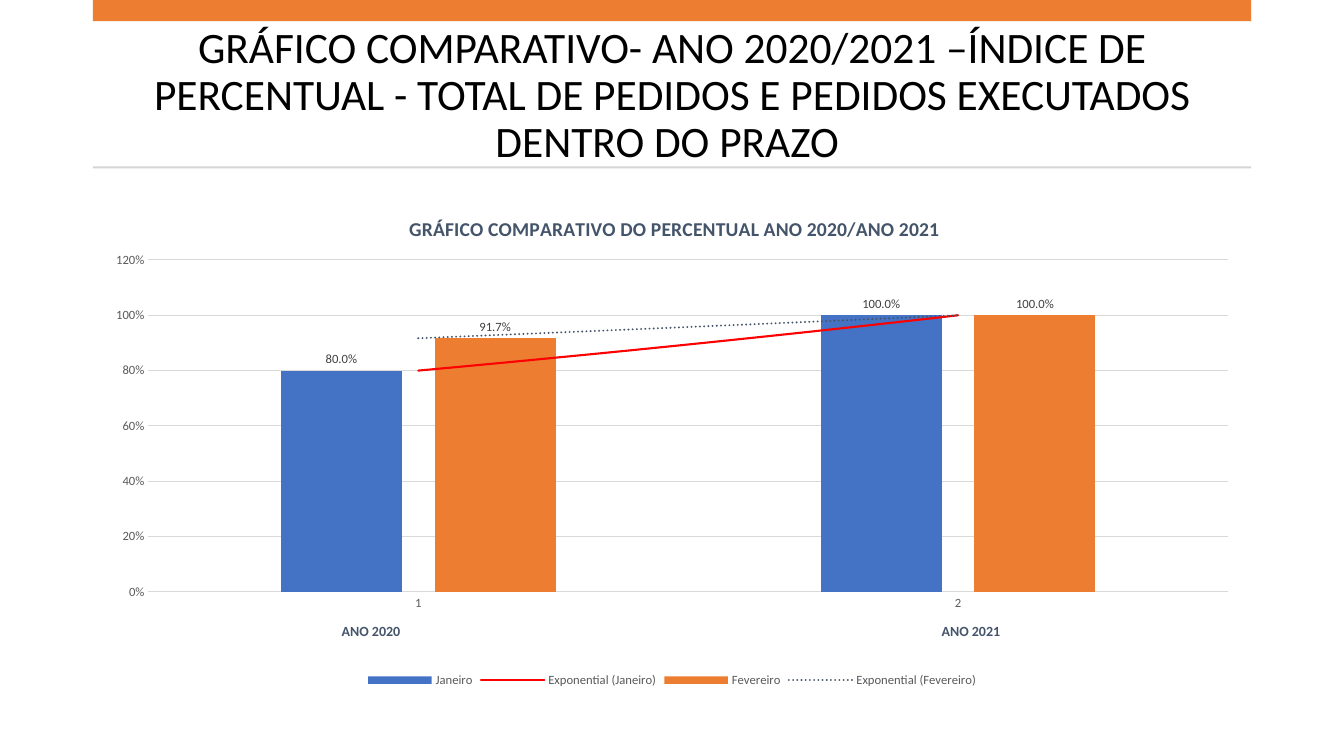
"""Build the slide comparing order percentages for 2020 and 2021."""
from lxml.etree import SubElement
from pptx import Presentation
from pptx.chart.data import CategoryChartData
from pptx.dml.color import RGBColor
from pptx.enum.chart import XL_CHART_TYPE, XL_LABEL_POSITION, XL_LEGEND_POSITION, XL_TICK_MARK
from pptx.enum.shapes import MSO_SHAPE
from pptx.enum.text import MSO_ANCHOR, PP_ALIGN
from pptx.oxml.ns import qn
from pptx.util import Inches, Pt

FONT = "Calibri"
BLACK = RGBColor(0x00, 0x00, 0x00)
BLUE = RGBColor(0x44, 0x72, 0xC4)
ORANGE = RGBColor(0xED, 0x7D, 0x31)
RED = RGBColor(0xFF, 0x00, 0x00)
SLATE = RGBColor(0x44, 0x54, 0x6A)
DARK_GRAY = RGBColor(0x40, 0x40, 0x40)
GRAY = RGBColor(0x59, 0x59, 0x59)
GRID_GRAY = RGBColor(0xD9, 0xD9, 0xD9)
RULE_GRAY = RGBColor(0xD5, 0xD5, 0xD5)

HEADING = ("GRÁFICO COMPARATIVO- ANO 2020/2021 –ÍNDICE DE PERCENTUAL - "
           "TOTAL DE PEDIDOS E PEDIDOS EXECUTADOS DENTRO DO PRAZO ")
CHART_TITLE = "GRÁFICO COMPARATIVO DO PERCENTUAL ANO 2020/ANO 2021"
CATEGORIES = ["1", "2"]
SERIES = [
    ("Janeiro", (0.8, 1), BLUE, RED, "solid"),
    ("Fevereiro", (0.917, 1), ORANGE, SLATE, "sysDot"),
]
BANDS = [(0, 0.21, ORANGE), (1.65, 0.02, RULE_GRAY)]
YEARS = [("ANO 2020", 3.68), ("ANO 2021", 9.63)]
LEFT, WIDTH = 0.92, 11.49
CHART_TOP, CHART_HEIGHT = 1.9, 4.96
YEAR_MIDDLE, YEAR_WIDTH, YEAR_HEIGHT = 6.27, 1.2, 0.3
TITLE_LAYOUT = {"xMode": "edge", "yMode": "edge", "x": 0.27, "y": 0.04}
PLOT_LAYOUT = {"layoutTarget": "inner", "xMode": "edge", "yMode": "edge",
               "x": 0.048, "y": 0.137, "w": 0.932, "h": 0.664}


def style_font(font, size, color, bold=False):
    font.name = FONT
    font.size = Pt(size)
    font.bold = bold
    font.color.rgb = color


def add_text(page, text, left, top, width, height, size, color, bold=False):
    box = page.shapes.add_textbox(Inches(left), Inches(top), Inches(width), Inches(height))
    frame = box.text_frame
    frame.word_wrap = True
    frame.vertical_anchor = MSO_ANCHOR.MIDDLE
    para = frame.paragraphs[0]
    para.alignment = PP_ALIGN.CENTER
    para.line_spacing = 0.9
    span = para.add_run()
    span.text = text
    style_font(span.font, size, color, bold)


def add_band(page, top, height, color):
    band = page.shapes.add_shape(MSO_SHAPE.RECTANGLE, Inches(LEFT), Inches(top),
                                 Inches(WIDTH), Inches(height))
    band.shadow.inherit = False
    band.fill.solid()
    band.fill.fore_color.rgb = color
    band.line.fill.background()


def set_layout(parent, values):
    layout = parent.find(qn("c:layout"))
    if layout is None:
        layout = parent.makeelement(qn("c:layout"))
        text = parent.find(qn("c:tx"))
        if text is None:
            parent.insert(0, layout)
        else:
            text.addnext(layout)
    manual = SubElement(layout, qn("c:manualLayout"))
    for name, value in values.items():
        SubElement(manual, qn(f"c:{name}"), val=str(value))


def add_trend(series, color, dash):
    trend = series._element.makeelement(qn("c:trendline"))
    properties = SubElement(trend, qn("c:spPr"))
    line = SubElement(properties, qn("a:ln"), w=str(Pt(1.5)), cap="rnd")
    fill = SubElement(line, qn("a:solidFill"))
    SubElement(fill, qn("a:srgbClr"), val=str(color))
    SubElement(line, qn("a:prstDash"), val=dash)
    for name, value in (("trendlineType", "exp"), ("dispRSqr", "0"), ("dispEq", "0")):
        SubElement(trend, qn(f"c:{name}"), val=value)
    series._element.find(qn("c:cat")).addprevious(trend)


def style_axes(chart):
    for axis in (chart.category_axis, chart.value_axis):
        axis.major_tick_mark = XL_TICK_MARK.NONE
        axis.minor_tick_mark = XL_TICK_MARK.NONE
        style_font(axis.tick_labels.font, 9, GRAY)
    chart.category_axis.format.line.color.rgb = GRID_GRAY
    chart.category_axis.format.line.width = Pt(0.75)
    values = chart.value_axis
    values.minimum_scale, values.maximum_scale, values.major_unit = 0, 1.2, 0.2
    values.format.line.fill.background()
    values.major_gridlines.format.line.color.rgb = GRID_GRAY
    values.major_gridlines.format.line.width = Pt(0.75)
    values.tick_labels.number_format = "0%"
    values.tick_labels.number_format_is_linked = False


def style_series(series, color, trend_color, dash):
    series.format.fill.solid()
    series.format.fill.fore_color.rgb = color
    labels = series.data_labels
    labels.show_value = True
    labels.position = XL_LABEL_POSITION.OUTSIDE_END
    labels.number_format = "0.0%"
    labels.number_format_is_linked = False
    style_font(labels.font, 9, DARK_GRAY)
    add_trend(series, trend_color, dash)


def add_comparison(page):
    data = CategoryChartData(number_format="0.0%")
    data.categories = CATEGORIES
    for name, values, *_ in SERIES:
        data.add_series(name, values)
    chart = page.shapes.add_chart(XL_CHART_TYPE.COLUMN_CLUSTERED, Inches(LEFT), Inches(CHART_TOP),
                                  Inches(WIDTH), Inches(CHART_HEIGHT), data).chart
    style_font(chart.font, 10, BLACK)
    chart.has_title = True
    span = chart.chart_title.text_frame.paragraphs[0].add_run()
    span.text = CHART_TITLE
    style_font(span.font, 14, SLATE, True)
    chart.chart_title.include_in_layout = False
    set_layout(chart.chart_title._element, TITLE_LAYOUT)
    chart.has_legend = True
    chart.legend.position = XL_LEGEND_POSITION.BOTTOM
    chart.legend.include_in_layout = False
    style_font(chart.legend.font, 9, GRAY)
    style_axes(chart)
    plot = chart.plots[0]
    plot.gap_width = 219
    plot.overlap = -27
    plot.vary_by_categories = False
    for series, (_, _, color, trend_color, dash) in zip(plot.series, SERIES):
        style_series(series, color, trend_color, dash)
    set_layout(plot._element.getparent(), PLOT_LAYOUT)


def main():
    deck = Presentation()
    deck.slide_width = Inches(13.33)
    deck.slide_height = Inches(7.5)
    page = deck.slides.add_slide(deck.slide_layouts[6])
    add_text(page, HEADING, LEFT, 0.37, WIDTH, 1.18, 31, BLACK)
    for top, height, color in BANDS:
        add_band(page, top, height, color)
    add_comparison(page)
    for year, center in YEARS:
        add_text(page, year, center - YEAR_WIDTH / 2, YEAR_MIDDLE - YEAR_HEIGHT / 2,
                 YEAR_WIDTH, YEAR_HEIGHT, 10, SLATE, True)
    deck.save("out.pptx")


if __name__ == "__main__":
    main()
